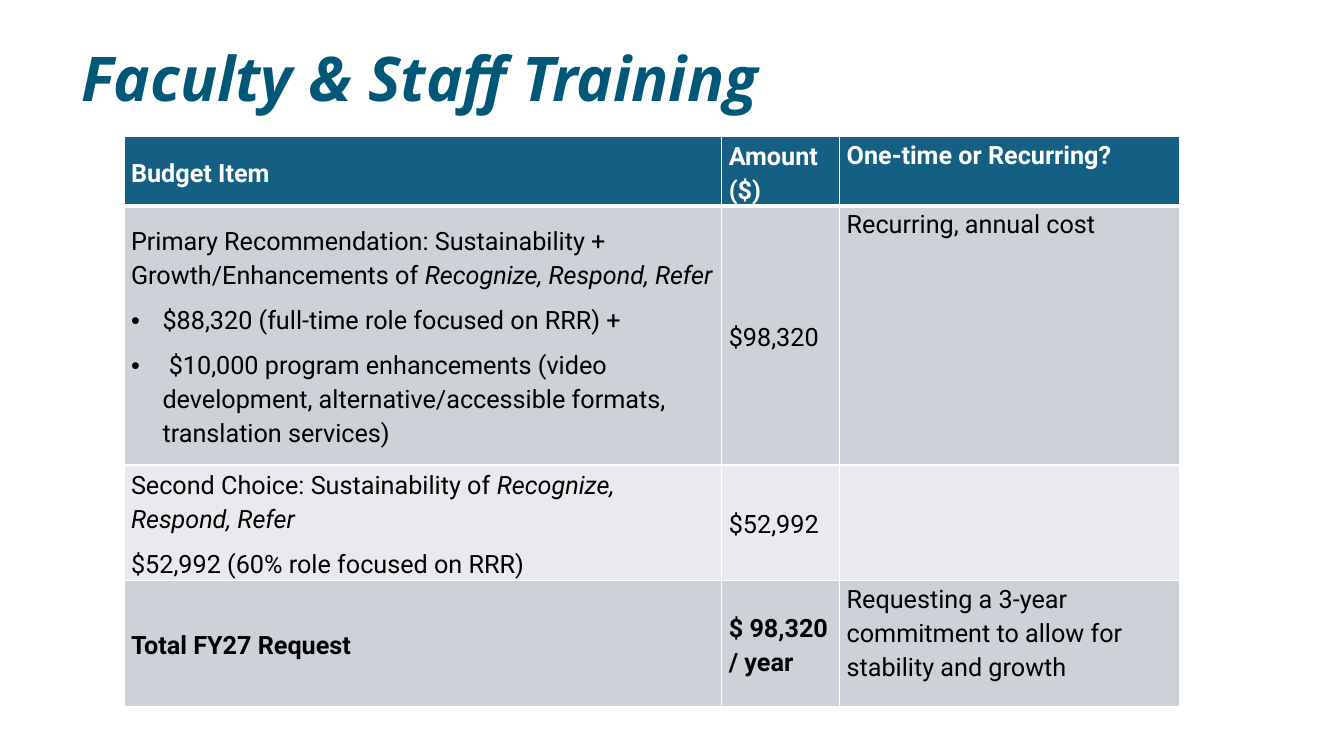
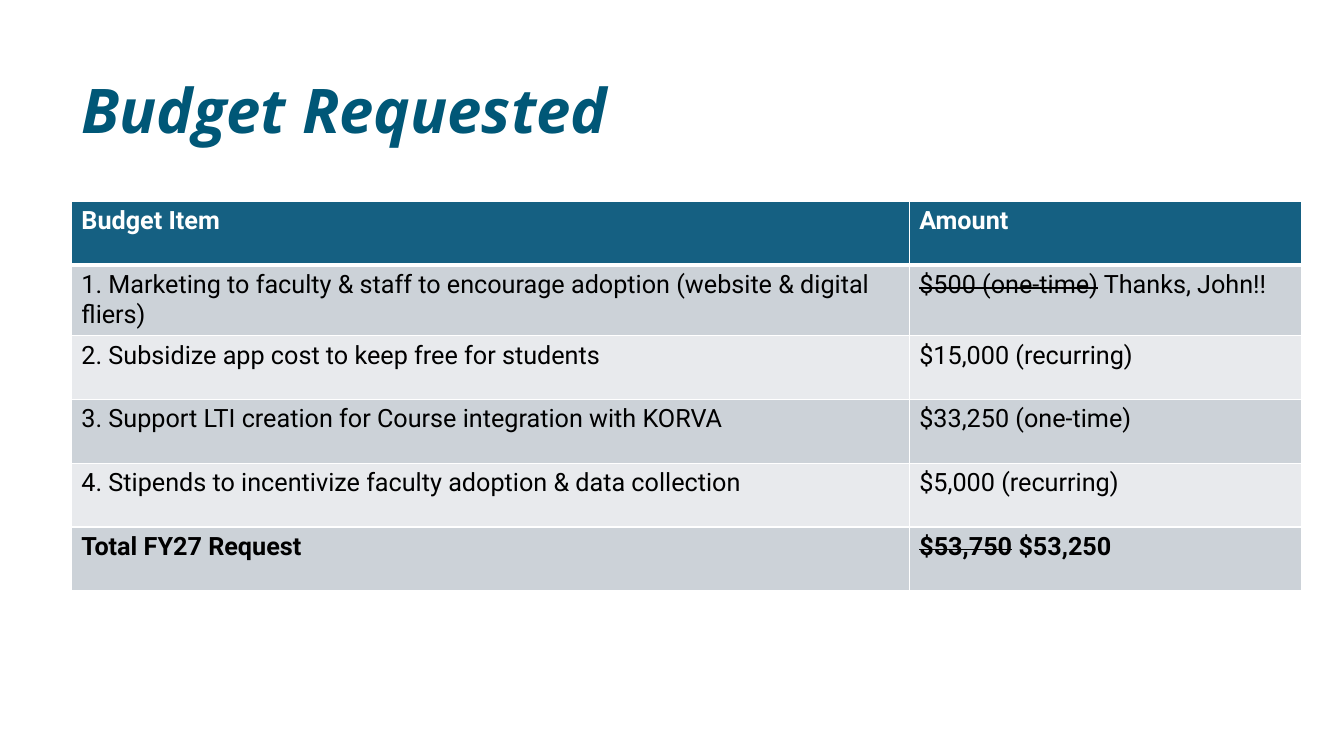
"""Build two budget slides with a shared title style and table style."""
from dataclasses import dataclass

from lxml.etree import SubElement
from pptx import Presentation
from pptx.dml.color import RGBColor
from pptx.enum.text import MSO_ANCHOR
from pptx.oxml.ns import qn
from pptx.slide import Slide
from pptx.table import _Cell
from pptx.text.text import _Paragraph
from pptx.util import Pt

WHITE = RGBColor(0xFF, 0xFF, 0xFF)
BLACK = RGBColor(0x00, 0x00, 0x00)
TEAL = RGBColor(0x00, 0x57, 0x77)
HEAD = RGBColor(0x15, 0x60, 0x82)
DARK = RGBColor(0xCC, 0xD2, 0xD8)
LIGHT = RGBColor(0xE8, 0xEA, 0xED)
LEFT = 51


@dataclass(frozen=True)
class Bit:
    text: str
    bold: bool = False
    slant: bool = False
    strike: bool = False


@dataclass(frozen=True)
class Para:
    bits: tuple[Bit, ...]
    dot: bool = False


@dataclass(frozen=True)
class Look:
    side: float
    edge: float
    mids: int = 0
    lead: float | None = None
    after: float = 0


@dataclass(frozen=True)
class Grid:
    left: float
    top: float
    cols: list[float]
    rows: list[float]
    cells: list[list[list[Para]]]
    look: Look


def line(*bits: Bit, dot: bool = False) -> Para:
    return Para(bits, dot)


def say(text: str, bold: bool = False) -> list[Para]:
    return [line(Bit(text, bold))]


def add_bit(para: _Paragraph, bit: Bit, face: str, size: float, color: RGBColor) -> None:
    run = para.add_run()
    run.text = bit.text
    font = run.font
    font.name, font.size = face, Pt(size)
    font.bold, font.italic = bit.bold, bit.slant
    font.color.rgb = color
    if bit.strike:
        run._r.get_or_add_rPr().set("strike", "sngStrike")


def add_title(slide: Slide, text: str, high: float) -> None:
    box = slide.shapes.add_textbox(Pt(LEFT), Pt(29), Pt(828), Pt(high))
    frame = box.text_frame
    frame.word_wrap = True
    frame.vertical_anchor = MSO_ANCHOR.MIDDLE
    para = frame.paragraphs[0]
    para.line_spacing = 0.9
    add_bit(para, Bit(text, True, True), "Open Sans", 44, TEAL)


def add_dot(para: _Paragraph) -> None:
    props = para._p.get_or_add_pPr()
    props.set("marL", str(Pt(22.5)))
    props.set("indent", str(-Pt(22.5)))
    SubElement(props, qn("a:buFont"), typeface="Arial")
    SubElement(props, qn("a:buChar"), char="•")


def add_edges(cell: _Cell, row: int) -> None:
    props = cell._tc.get_or_add_tcPr()
    thick = {0: "B", 1: "T"}.get(row)
    for side in "LRTB":
        width = Pt(3 if side == thick else 1)
        edge = SubElement(props, qn(f"a:ln{side}"), w=str(width))
        fill = SubElement(edge, qn("a:solidFill"))
        SubElement(fill, qn("a:srgbClr"), val=str(WHITE))


def fill_cell(cell: _Cell, row: int, col: int, paras: list[Para], look: Look) -> None:
    add_edges(cell, row)
    cell.fill.solid()
    cell.fill.fore_color.rgb = HEAD if row == 0 else DARK if row % 2 else LIGHT
    cell.margin_left = cell.margin_right = Pt(look.side)
    cell.margin_top = cell.margin_bottom = Pt(look.edge)
    cell.vertical_anchor = MSO_ANCHOR.MIDDLE if col < look.mids else MSO_ANCHOR.TOP
    frame = cell.text_frame
    for i, item in enumerate(paras):
        para = frame.add_paragraph() if i else frame.paragraphs[0]
        if item.dot:
            add_dot(para)
        if look.lead:
            para.line_spacing = look.lead
            para.space_after = Pt(look.after)
        for bit in item.bits:
            add_bit(para, bit, "Roboto", 18, BLACK if row else WHITE)


def add_grid(slide: Slide, grid: Grid) -> None:
    table = slide.shapes.add_table(
        len(grid.rows), len(grid.cols), Pt(grid.left), Pt(grid.top),
        Pt(sum(grid.cols)), Pt(sum(grid.rows))).table
    table.first_row = table.horz_banding = False
    for col, wide in zip(table.columns, grid.cols):
        col.width = Pt(wide)
    for row, high in zip(table.rows, grid.rows):
        row.height = Pt(high)
    for r, cells in enumerate(grid.cells):
        for c, paras in enumerate(cells):
            fill_cell(table.cell(r, c), r, c, paras, grid.look)


COURSE = Bit("Recognize, Respond, Refer", slant=True)

STAFF = Grid(
    88.6, 97.5, [427, 84.2, 242.6], [47.5, 185, 80.5, 90],
    [
        [say("Budget Item", True), say("Amount ($)", True),
         say("One-time or Recurring?", True)],
        [[line(Bit("Primary Recommendation: Sustainability + Growth/Enhancements of "),
               COURSE),
          line(Bit("$88,320 (full-time role focused on RRR) +"), dot=True),
          line(Bit(" $10,000 program enhancements (video development, "
                   "alternative/accessible formats, translation services)"), dot=True)],
         say("$98,320"), say("Recurring, annual cost")],
        [[line(Bit("Second Choice: Sustainability of "), COURSE),
          line(Bit("$52,992 (60% role focused on RRR)"))],
         say("$52,992"), []],
        [say("Total FY27 Request", True), say("$ 98,320 / year", True),
         say("Requesting a 3-year commitment to allow for stability and growth")],
    ],
    Look(5, 0, mids=2, lead=1.15, after=8))

COSTS = Grid(
    LEFT, 144, [598.5, 280], [45.5] * 6,
    [
        [say("Budget Item", True), say("Amount", True)],
        [say("1. Marketing to faculty & staff to encourage adoption "
             "(website & digital fliers)"),
         [line(Bit("$500 (one-time)", strike=True), Bit(" Thanks, John!!"))]],
        [say("2. Subsidize app cost to keep free for students"),
         say("$15,000 (recurring)")],
        [say("3. Support LTI creation for Course integration with KORVA"),
         say("$33,250 (one-time)")],
        [say("4. Stipends to incentivize faculty adoption & data collection"),
         say("$5,000 (recurring)")],
        [say("Total FY27 Request", True),
         [line(Bit("$53,750", True, strike=True), Bit(" $53,250", True))]],
    ],
    Look(7.2, 3.6))


def main() -> None:
    deck = Presentation()
    deck.slide_width, deck.slide_height = Pt(960), Pt(540)
    pages = [("Faculty & Staff Training", 58, STAFF), ("Budget Requested", 104.5, COSTS)]
    for title, high, grid in pages:
        slide = deck.slides.add_slide(deck.slide_layouts[6])
        add_title(slide, title, high)
        add_grid(slide, grid)
    deck.save("out.pptx")


if __name__ == "__main__":
    main()
